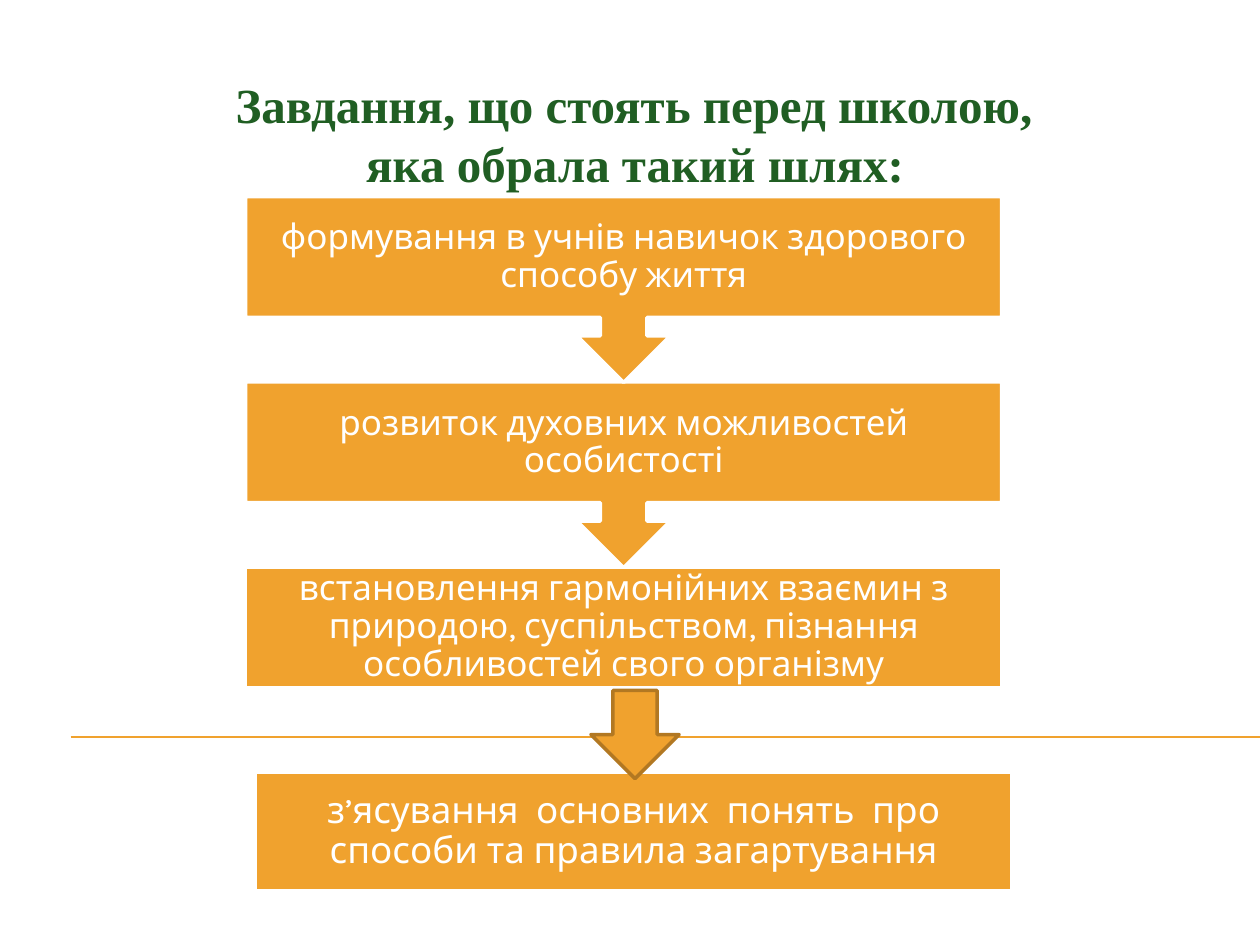
from pptx import Presentation
from pptx import util as u
from pptx.dml.color import RGBColor
from pptx.enum import shapes, text
from pptx.oxml.ns import qn
from lxml import etree

ORANGE, BROWN, GREEN, WHITE = "F0A22E", "B27822", "205E23", "FFFFFF"
BODY_FONT, TITLE_FONT = "Karla", "Times New Roman"
BOX_WIDTH, INSET = 6, 0.16


def colour(value):
    return RGBColor.from_string(value)


class TaskSlide:
    def __init__(self, page):
        self.page = page

    def rule(self, left, right, y):
        line = self.page.shapes.add_connector(
            shapes.MSO_CONNECTOR.STRAIGHT,
            u.Inches(left), u.Inches(y), u.Inches(right), u.Inches(y))
        line.line.color.rgb = colour(ORANGE)
        line.line.width = u.Pt(0.75)
        etree.SubElement(line._element.spPr, qn("a:effectLst"))

    def span(self, para, wording, size, font, ink, bold=False):
        span = para.add_run()
        span.text = wording
        span.font.size = u.Pt(size)
        span.font.name = font
        span.font.bold = bold
        span.font.color.rgb = colour(ink)

    def title(self, lines, left, top, width, height):
        box = self.page.shapes.add_textbox(*map(u.Inches, (left, top, width, height)))
        frame = box.text_frame
        frame.word_wrap = True
        frame.vertical_anchor = text.MSO_ANCHOR.MIDDLE
        para = frame.paragraphs[0]
        para.alignment = text.PP_ALIGN.CENTER
        for index, wording in enumerate(lines):
            if index:
                para.add_line_break()
            self.span(para, wording, 28, TITLE_FONT, GREEN, bold=True)
        self.span(para, " ", 24, BODY_FONT, GREEN)

    def paint(self, shape, edge):
        shape.shadow.inherit = False
        shape.fill.solid()
        shape.fill.fore_color.rgb = colour(ORANGE)
        shape.line.color.rgb = colour(edge)
        shape.line.width = u.Pt(2)

    def task(self, wording, left, top, height, size=20, pointer=False):
        """Box with text, optionally with an arrow growing out of its bottom."""
        right, bottom, middle = left + BOX_WIDTH, top + height, left + BOX_WIDTH / 2
        points = [(left, top), (right, top), (right, bottom)]
        if pointer:
            shaft, head, neck, tip = 0.185, 0.37, bottom + 0.145, bottom + 0.515
            points += [(middle + shaft, bottom), (middle + shaft, neck),
                       (middle + head, neck), (middle, tip), (middle - head, neck),
                       (middle - shaft, neck), (middle - shaft, bottom)]
        points.append((left, bottom))
        corners = [(u.Inches(x), u.Inches(y)) for x, y in points]
        builder = self.page.shapes.build_freeform(*corners[0])
        builder.add_line_segments(corners[1:], close=True)
        box = builder.convert_to_shape()
        self.paint(box, WHITE)

        frame = box.text_frame
        frame.word_wrap = True
        frame.vertical_anchor = text.MSO_ANCHOR.MIDDLE
        frame.margin_left = frame.margin_right = frame.margin_top = u.Inches(INSET)
        frame.margin_bottom = u.Inches(0.67 if pointer else INSET)
        para = frame.paragraphs[0]
        para.alignment = text.PP_ALIGN.CENTER
        para.line_spacing = 0.9
        self.span(para, wording, size, BODY_FONT, WHITE)

    def arrow(self, left, top, side):
        arrow = self.page.shapes.add_shape(
            shapes.MSO_SHAPE.DOWN_ARROW, *map(u.Inches, (left, top, side, side)))
        self.paint(arrow, BROWN)


def main():
    deck = Presentation()
    deck.slide_width, deck.slide_height = u.Inches(10), u.Inches(7.5)
    slide = TaskSlide(deck.slides.add_slide(deck.slide_layouts[6]))

    # Background rule and title
    slide.rule(0.56, 10, 5.85)
    slide.title(["Завдання, що стоять перед школою, ", "яка обрала такий шлях:"],
                0.33, 0.5, 9.5, 1.12)

    # Chain of tasks, stacked from the bottom so each arrow tip lies on top
    tasks = [
        "формування в учнів навичок здорового способу життя",
        "розвиток духовних можливостей особистості",
        "встановлення гармонійних взаємин з природою, суспільством, "
        "пізнання особливостей свого організму",
    ]
    last = len(tasks) - 1
    for index in range(last, -1, -1):
        slide.task(tasks[index], 1.95, 1.56 + 1.47 * index, 0.96, pointer=index < last)

    # Closing task with its own arrow
    slide.task("з’ясування  основних  понять  про способи та правила загартування",
               2.03, 6.13, 0.94, size=21)
    slide.arrow(4.69, 5.48, 0.7)

    deck.save("out.pptx")


if __name__ == "__main__":
    main()
